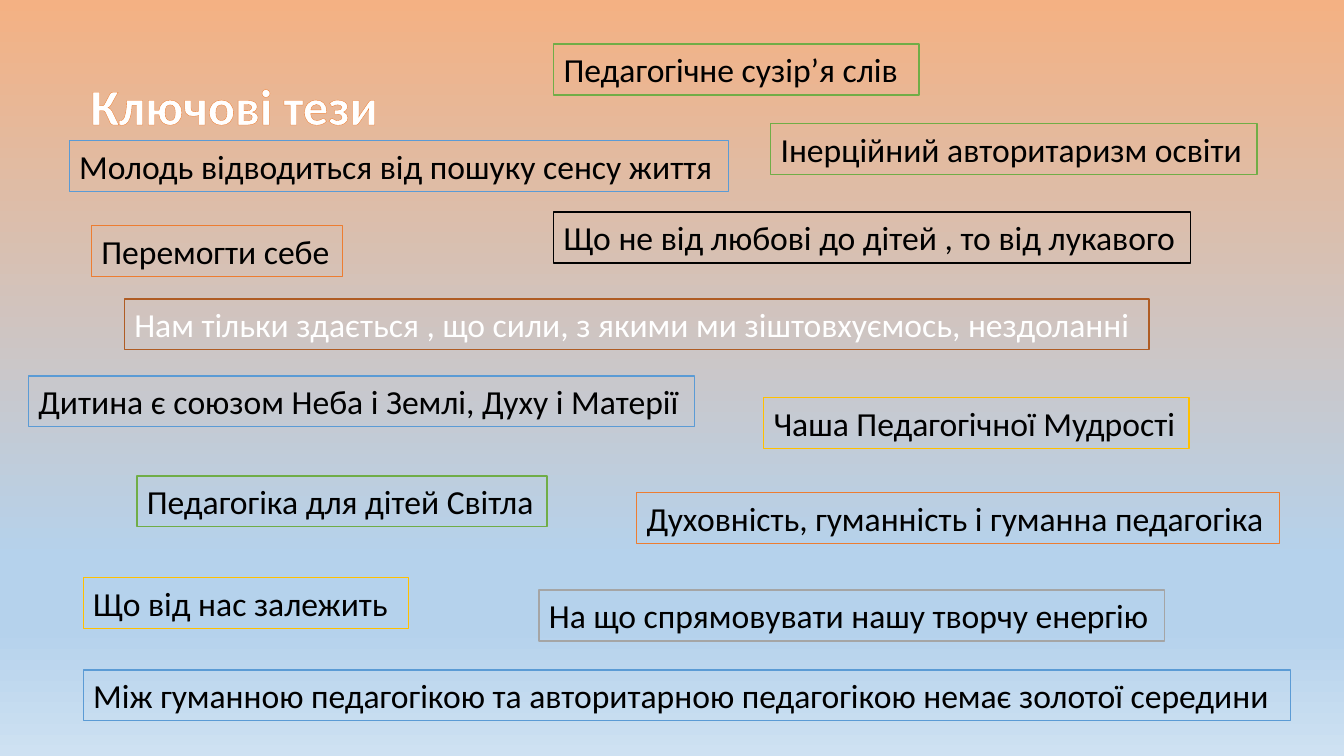
from copy import deepcopy

from pptx import Presentation
from pptx.dml.color import RGBColor
from pptx.enum import shapes, text
from pptx.oxml import parse_xml
from pptx.oxml.ns import nsdecls, qn
from pptx.util import Pt

BLACK = RGBColor(0x00, 0x00, 0x00)
WHITE = RGBColor(0xFF, 0xFF, 0xFF)
BLUE = RGBColor(0x5B, 0x9B, 0xD5)
GREEN = RGBColor(0x70, 0xAD, 0x47)
ORANGE = RGBColor(0xED, 0x7D, 0x31)
RUST = RGBColor(0xAF, 0x5C, 0x24)
GOLD = RGBColor(0xFF, 0xC0, 0x00)
GREY = RGBColor(0xA5, 0xA5, 0xA5)
PEACH = RGBColor(0xF4, 0xB1, 0x83)
SKY = RGBColor(0xB5, 0xD2, 0xEC)
PALE_SKY = RGBColor(0xCE, 0xE1, 0xF2)

SKY_STOPS = [(0, PEACH), (0.74, SKY), (0.83, SKY), (1, PALE_SKY)]
THESIS_HEIGHT = 36.35

# left, top, width, border, wording
THESES = [
    (49.5, 100.5, 471, BLUE, "Молодь відводиться від пошуку сенсу життя"),
    (395.5, 151.5, 455, BLACK, "Що не від любові до дітей , то від лукавого"),
    (88.8, 213.5, 732, RUST, "Нам тільки здається , що сили, з якими ми зіштовхуємось, нездоланні"),
    (550.5, 88.3, 347.5, GREEN, "Інерційний авторитаризм освіти"),
    (65.3, 161.3, 179.5, ORANGE, "Перемогти себе"),
    (20.3, 268.5, 476, BLUE, "Дитина є союзом Неба і Землі, Духу і Матерії"),
    (395.5, 31.5, 261, GREEN, "Педагогічне сузір’я слів"),
    (454.8, 352, 459, ORANGE, "Духовність, гуманність і гуманна педагогіка"),
    (59.5, 478.5, 862.5, BLUE,
     "Між гуманною педагогікою та авторитарною педагогікою немає золотої середини"),
    (545.5, 284, 304, GOLD, "Чаша Педагогічної Мудрості"),
    (97.8, 340, 293, GREEN, "Педагогіка для дітей Світла"),
    (59.5, 412.5, 232.5, GOLD, "Що від нас залежить"),
    (385, 421.5, 447, GREY, "На що спрямовувати нашу творчу енергію"),
]


def paint_background(s, stops):
    fill = s.background.fill
    fill.gradient()
    fill.gradient_angle = 270
    stop_list = s._element.find(".//" + qn("a:gsLst"))
    for _ in range(len(stops) - len(stop_list)):
        stop_list.append(deepcopy(stop_list[0]))
    for stop, (position, color) in zip(fill.gradient_stops, stops):
        stop.position = position
        stop.color.rgb = color


def write(sp, wording, size=24, color=BLACK, bold=False):
    tf = sp.text_frame
    tf.word_wrap = True
    tf.margin_right = 0
    tf.vertical_anchor = text.MSO_ANCHOR.TOP
    p = tf.paragraphs[0]
    p.alignment = text.PP_ALIGN.LEFT
    r = p.add_run()
    r.text = wording
    r.font.name = "Calibri"
    r.font.size = Pt(size)
    r.font.bold = bold
    r.font.color.rgb = color
    return r


def outline_letters(r, color, width):
    r.font._element.insert(0, parse_xml(
        f'<a:ln {nsdecls("a")} w="{Pt(width)}"><a:solidFill>'
        f'<a:srgbClr val="{color}"/></a:solidFill></a:ln>'))


def add_title(s, wording):
    sp = s.shapes.add_textbox(Pt(57.6), Pt(49.7), Pt(226.8), Pt(51))
    r = write(sp, wording, size=36, color=WHITE, bold=True)
    outline_letters(r, ORANGE, 0.52)


def add_thesis(s, left, top, width, border, wording):
    sp = s.shapes.add_shape(shapes.MSO_SHAPE.RECTANGLE,
                            Pt(left), Pt(top), Pt(width), Pt(THESIS_HEIGHT))
    sp.shadow.inherit = False
    sp.fill.background()
    sp.line.color.rgb = border
    sp.line.width = Pt(1)
    write(sp, wording, color=WHITE if border == RUST else BLACK)


def main():
    prs = Presentation()
    prs.slide_width, prs.slide_height = Pt(960), Pt(540)
    s = prs.slides.add_slide(prs.slide_layouts[6])
    paint_background(s, SKY_STOPS)
    add_title(s, "Ключові тези")
    for thesis in THESES:
        add_thesis(s, *thesis)
    prs.save("out.pptx")


if __name__ == "__main__":
    main()
